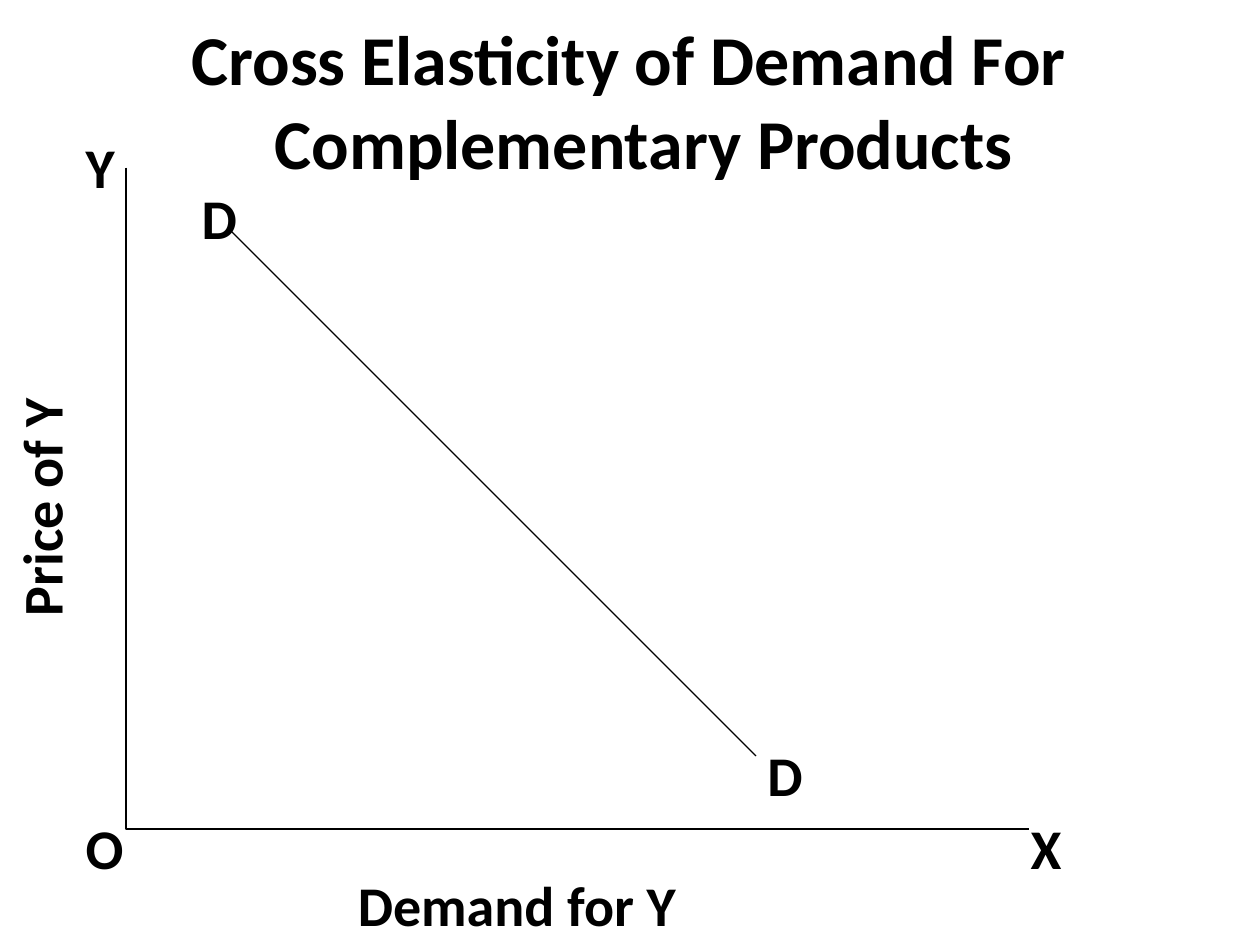
from dataclasses import dataclass
from lxml import etree
from pptx import Presentation
from pptx.dml.color import RGBColor
from pptx.enum.shapes import MSO_CONNECTOR
from pptx.oxml.ns import qn
from pptx.util import Inches, Pt

STRAIGHT = MSO_CONNECTOR.STRAIGHT


@dataclass(frozen=True)
class Theme:
    font: str = "Calibri"
    ink: RGBColor = RGBColor(0, 0, 0)
    head: int = 40
    label: int = 32
    line: float = 0.75


class Board:
    def __init__(self, slide, theme):
        self.slide = slide
        self.theme = theme

    def text(self, words, left, top, width, height, vert=None):
        box = self.slide.shapes.add_textbox(
            Inches(left), Inches(top), Inches(width), Inches(height))
        frame = box.text_frame
        frame.word_wrap = True
        frame.margin_left = frame.margin_right = 0
        frame.margin_top = frame.margin_bottom = 0
        if vert:
            box._element.txBody.bodyPr.set("vert", vert)
        self.fill(frame.paragraphs[0], words, self.theme.label, 0.01)
        return frame

    def fill(self, para, words, size, margin, indent=0):
        """Set a paragraph's words and style; margin and indent in inches."""
        para.text = words
        props = para._p.get_or_add_pPr()
        props.set("marL", str(Inches(margin)))
        props.set("indent", str(Inches(indent)))
        font = para.font
        font.name = self.theme.font
        font.size = Pt(size)
        font.bold = True
        font.color.rgb = self.theme.ink

    def title(self, words, mark):
        """Add the heading with the upper curve mark below it."""
        frame = self.text(words, 1.51, 0.12, 6.98, 1.89)
        self.fill(frame.paragraphs[0], words, self.theme.head, 0.67, -0.66)
        self.fill(frame.add_paragraph(), mark, self.theme.label, 0.09)

    def stroke(self, line):
        line.color.rgb = self.theme.ink
        line.width = Pt(self.theme.line)

    def axes(self, left, top, right, base):
        pen = self.slide.shapes.build_freeform(
            Inches(left), Inches(top), scale=1.0)
        pen.add_line_segments(
            [(Inches(left), Inches(base)), (Inches(right), Inches(base))],
            close=False)
        shape = pen.convert_to_shape()
        shape.shadow.inherit = False
        shape.fill.background()
        self.stroke(shape.line)

    def curve(self, x1, y1, x2, y2):
        line = self.slide.shapes.add_connector(
            STRAIGHT, Inches(x1), Inches(y1), Inches(x2), Inches(y2))
        self.stroke(line.line)
        etree.SubElement(line._element.spPr, qn("a:effectLst"))


def main():
    deck = Presentation()
    deck.slide_width, deck.slide_height = Inches(10), Inches(7.5)
    board = Board(deck.slides.add_slide(deck.slide_layouts[6]), Theme())

    board.axes(1, 1.33, 8.17, 6.58)
    board.curve(1.83, 1.83, 6, 6)
    board.title("Cross Elasticity of Demand For Complementary Products", "D")
    price = board.text("Price of Y", 0.15, 3.15, 0.47, 1.75, "vert270")
    price.paragraphs[0].line_spacing = Pt(31.4)
    for words, left, top, width in (
            ("Y", 0.67, 1.05, 0.26),
            ("O", 0.67, 6.46, 0.33),
            ("X", 8.17, 6.46, 0.27),
            ("D", 6.08, 5.88, 0.31),
            ("Demand for Y", 2.83, 6.91, 2.6)):
        board.text(words, left, top, width, 0.55)

    deck.save("out.pptx")


if __name__ == "__main__":
    main()
